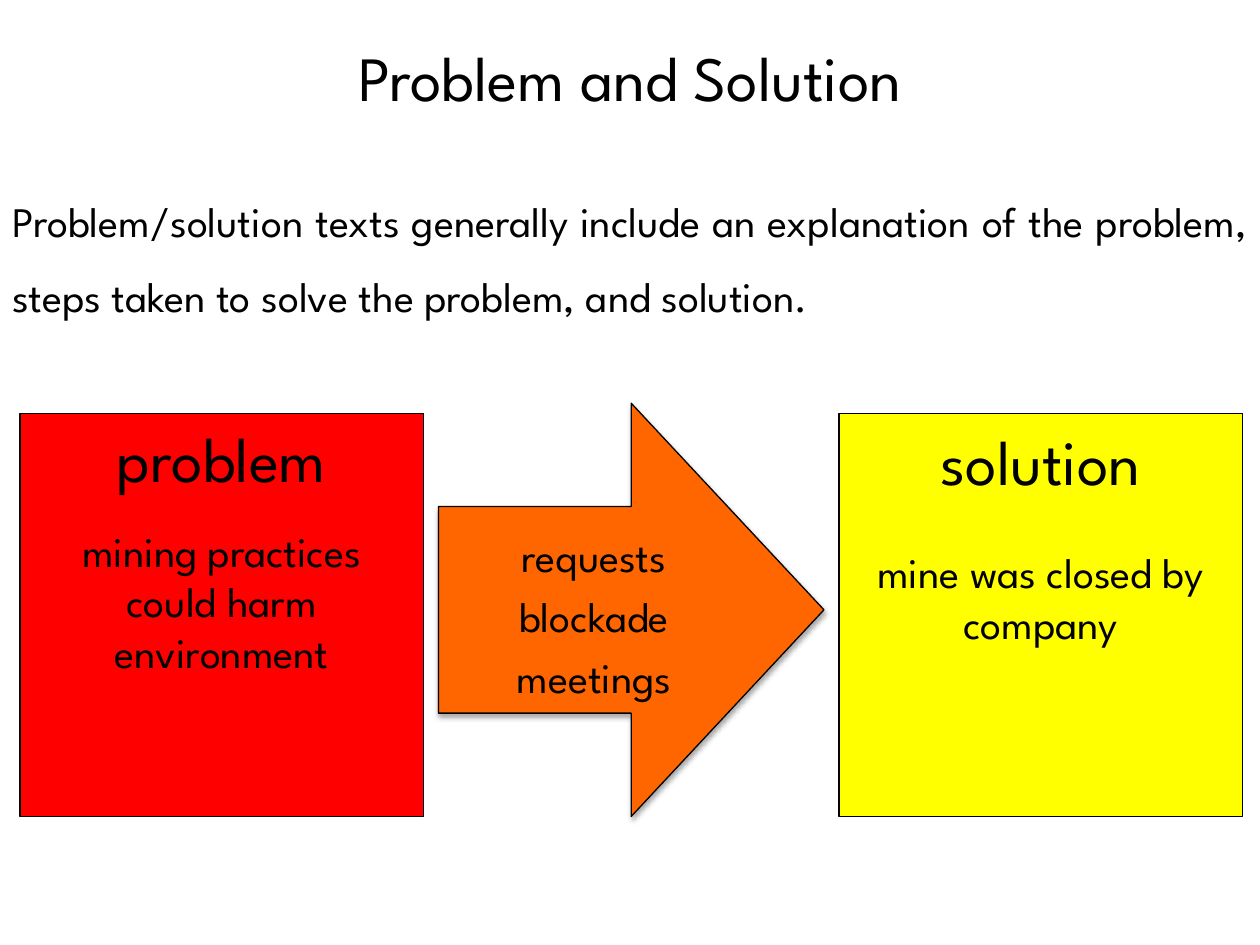
from dataclasses import dataclass

import lxml.etree
import pptx
import pptx.dml.color
import pptx.enum.shapes
import pptx.enum.text
import pptx.oxml
import pptx.oxml.ns
import pptx.util

Inches = pptx.util.Inches
Pt = pptx.util.Pt
RGB = pptx.dml.color.RGBColor
SHAPE = pptx.enum.shapes.MSO_SHAPE
ALIGN = pptx.enum.text.PP_ALIGN


@dataclass(frozen=True)
class Theme:
    font: str = "League Spartan"
    heading: int = 36
    body: int = 24
    ink: str = "000000"
    problem: str = "FF0000"
    steps: str = "FF6600"
    solution: str = "FFFF00"
    outline: float = 0.75


THEME = Theme()


def add_text(s, box, lines, size, align=ALIGN.CENTER, spacing=1.0):
    tf = s.shapes.add_textbox(*map(Inches, box)).text_frame
    tf.word_wrap = True
    tf.text = "\n".join(lines)
    for p in tf.paragraphs:
        p.alignment = align
        p.line_spacing = spacing
        for r in p.runs:
            r.font.name = THEME.font
            r.font.size = Pt(size)
            r.font.color.rgb = RGB.from_string(THEME.ink)


def add_block(s, kind, box, fill):
    sp = s.shapes.add_shape(kind, *map(Inches, box))
    sp.shadow.inherit = False
    sp.fill.solid()
    sp.fill.fore_color.rgb = RGB.from_string(fill)
    sp.line.color.rgb = RGB.from_string(THEME.ink)
    sp.line.width = Pt(THEME.outline)
    return sp


def add_drop_shadow(sp):
    qn = pptx.oxml.ns.qn
    effects = sp.element.spPr.find(qn("a:effectLst"))
    shadow = lxml.etree.SubElement(
        effects, qn("a:outerShdw"), blurRad=str(Pt(3.1)), dist=str(Pt(1.8)),
        dir="5400000", rotWithShape="0")
    color = lxml.etree.SubElement(shadow, qn("a:srgbClr"), val=THEME.ink)
    lxml.etree.SubElement(color, qn("a:alpha"), val="35000")


def add_intro(s, box, title, definition):
    left, top, width, height = box
    add_text(s, (left, top, width, 0.71), [title], THEME.heading)
    add_text(s, (left, top + 1.04, width, height - 1.04), [definition],
             THEME.body, ALIGN.JUSTIFY, 1.5)


def add_card(s, box, fill, heading, detail, heading_drop, detail_drop, detail_height):
    left, top, width, height = box
    add_block(s, SHAPE.RECTANGLE, box, fill)
    add_text(s, (left, top + heading_drop, width, 0.71), [heading], THEME.heading)
    add_text(s, (left, top + detail_drop, width, detail_height), [detail], THEME.body)


def add_steps_arrow(s, box, steps):
    left, top, width, height = box
    add_drop_shadow(add_block(s, SHAPE.RIGHT_ARROW, box, THEME.steps))
    add_text(s, (left, top + 0.88, 2.47, 1.54), steps, THEME.body, spacing=1.2)


def main():
    prs = pptx.Presentation()
    prs.slide_width, prs.slide_height = Inches(10), Inches(7.5)
    s = prs.slides.add_slide(prs.slide_layouts[6])
    add_intro(s, (0, 0.26, 10, 2.32), "Problem and Solution",
              "Problem/solution texts generally include an explanation of the "
              "problem, steps taken to solve the problem, and solution.")
    add_steps_arrow(s, (3.48, 3.2, 3.06, 3.28), ["requests", "blockade", "meetings"])
    add_card(s, (0.16, 3.28, 3.2, 3.2), THEME.problem, "problem",
             "mining practices could harm environment", 0, 0.84, 1.31)
    add_card(s, (6.66, 3.28, 3.2, 3.2), THEME.solution, "solution",
             "mine was closed by company", 0.02, 1.01, 0.91)
    prs.save("out.pptx")


if __name__ == "__main__":
    main()
